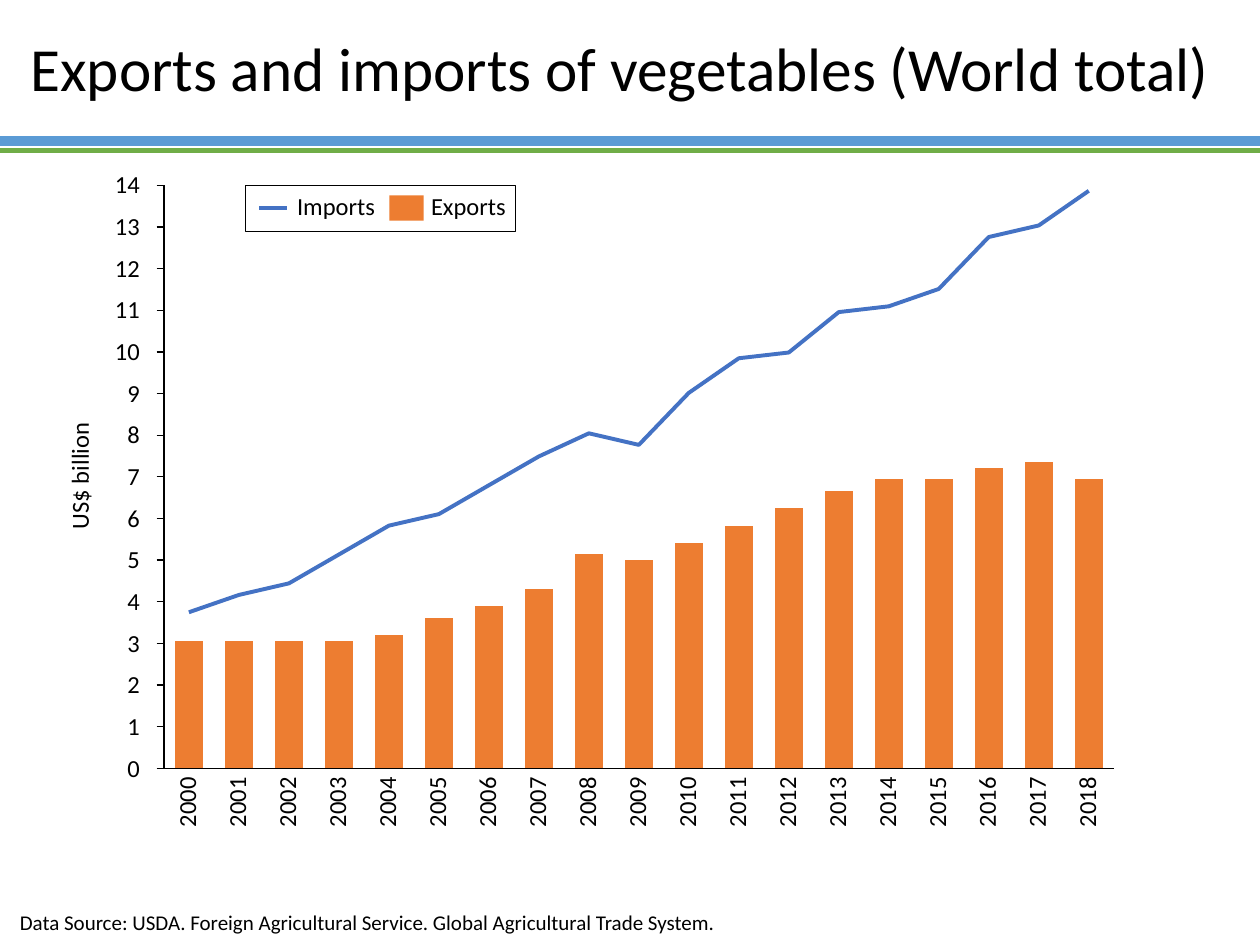
"""Build a slide with a combined chart of vegetable exports and imports."""
from dataclasses import dataclass

from lxml.etree import SubElement
from pptx import Presentation
from pptx.chart.data import CategoryChartData
from pptx.dml.color import RGBColor
from pptx.enum.chart import XL_CHART_TYPE, XL_MARKER_STYLE, XL_TICK_LABEL_POSITION, XL_TICK_MARK
from pptx.enum.shapes import MSO_CONNECTOR, MSO_SHAPE
from pptx.enum.text import MSO_ANCHOR, MSO_AUTO_SIZE, PP_ALIGN
from pptx.oxml import parse_xml
from pptx.oxml.ns import nsdecls, qn
from pptx.util import Cm, Pt


@dataclass(frozen=True)
class Theme:
    font: str = "Calibri"
    black: RGBColor = RGBColor(0x00, 0x00, 0x00)
    upper_rule: RGBColor = RGBColor(0x5B, 0x9B, 0xD5)
    lower_rule: RGBColor = RGBColor(0x70, 0xAD, 0x47)
    exports: RGBColor = RGBColor(0xED, 0x7D, 0x31)
    imports: RGBColor = RGBColor(0x44, 0x72, 0xC4)
    title_size: Pt = Pt(35)
    label_size: Pt = Pt(14)
    source_size: Pt = Pt(12)
    chart_size: Pt = Pt(10)


theme = Theme()


def add_label(text, left, top, width, height, alignment, vertical=False, anchor=MSO_ANCHOR.MIDDLE):
    text_box = slide.shapes.add_textbox(Cm(left), Cm(top), Cm(width), Cm(height))
    frame = text_box.text_frame
    frame.margin_left = frame.margin_right = frame.margin_top = frame.margin_bottom = 0
    frame.word_wrap = False
    frame.vertical_anchor = anchor
    if vertical:
        frame._txBody.bodyPr.set("vert", "vert270")
    paragraph = frame.paragraphs[0]
    paragraph.alignment = alignment
    paragraph.line_spacing = 0.9
    run = paragraph.add_run()
    run.text = text
    run.font.name = theme.font
    run.font.size = theme.label_size
    run.font.color.rgb = theme.black


def add_line(left, right, top, color, width):
    connector = slide.shapes.add_connector(
        MSO_CONNECTOR.STRAIGHT, Cm(left), Cm(top), Cm(right), Cm(top))
    connector.line.color.rgb = color
    connector.line.width = Pt(width)
    SubElement(connector._element.spPr, qn("a:effectLst"))


presentation = Presentation()
presentation.slide_width = Cm(25.4)
presentation.slide_height = Cm(19.05)
slide = presentation.slides.add_slide(presentation.slide_layouts[5])

add_line(-0.03, 25.45, 2.84, theme.upper_rule, 6)
add_line(-0.03, 25.45, 3.03, theme.lower_rule, 3)

title = slide.shapes.title
title.left, title.top, title.width, title.height = Cm(0.36), Cm(0.27), Cm(24.79), Cm(2.34)
title.text_frame.vertical_anchor = MSO_ANCHOR.MIDDLE
title.text_frame.auto_size = MSO_AUTO_SIZE.NONE
paragraph = title.text_frame.paragraphs[0]
paragraph.alignment = PP_ALIGN.LEFT
paragraph.line_spacing = 0.9
run = paragraph.add_run()
run.text = "Exports and imports of vegetables (World total)"
run.font.name = theme.font
run.font.size = theme.title_size
run.font.color.rgb = theme.black

chart_data = CategoryChartData()
chart_data.categories = [str(number) for number in range(1, 20)]
chart_data.add_series(
    "Series 1", [22, 22, 22, 22, 23, 26, 28, 31, 37, 36, 39, 42, 45, 48, 50, 50, 52, 53, 50])
chart_data.add_series(
    "Series 2", [27, 30, 32, 37, 42, 44, 49, 54, 58, 56, 65, 71, 72, 79, 80, 83, 92, 94, 100])
chart = slide.shapes.add_chart(
    XL_CHART_TYPE.COLUMN_STACKED, Cm(3.07), Cm(3.5), Cm(19.6), Cm(12.22), chart_data).chart
chart.has_legend = False
chart.has_title = False
chart.font.name = theme.font
chart.font.size = theme.chart_size
chart.font.color.rgb = theme.black

columns = chart.plots[0]
columns.gap_width = 80
columns.overlap = 100
columns.vary_by_categories = False
column_chart = columns._element
line_chart = parse_xml(
    f'<c:lineChart {nsdecls("c")}><c:grouping val="standard"/><c:varyColors val="0"/></c:lineChart>')
imports_element = columns.series[1]._element
for invert in imports_element.findall(qn("c:invertIfNegative")):
    imports_element.remove(invert)
line_chart.append(imports_element)
SubElement(line_chart, qn("c:marker")).set("val", "1")
for axis_id in column_chart.findall(qn("c:axId")):
    SubElement(line_chart, qn("c:axId")).set("val", axis_id.get("val"))
column_chart.addnext(line_chart)

exports_series = chart.plots[0].series[0]
exports_series.format.fill.solid()
exports_series.format.fill.fore_color.rgb = theme.exports
imports_series = chart.plots[1].series[0]
imports_series.format.line.color.rgb = theme.imports
imports_series.format.line.width = Pt(2.25)
imports_series.marker.style = XL_MARKER_STYLE.NONE
imports_series.smooth = False

plot_area = column_chart.getparent()
for layout in plot_area.findall(qn("c:layout")):
    plot_area.remove(layout)
plot_area.insert(0, parse_xml(
    f'<c:layout {nsdecls("c")}><c:manualLayout><c:layoutTarget val="inner"/>'
    '<c:xMode val="edge"/><c:yMode val="edge"/><c:x val="0.012"/><c:y val="0.019"/>'
    '<c:w val="0.977"/><c:h val="0.962"/></c:manualLayout></c:layout>'))

for axis, tick_mark in (
        (chart.category_axis, XL_TICK_MARK.NONE), (chart.value_axis, XL_TICK_MARK.OUTSIDE)):
    axis.has_major_gridlines = False
    axis.major_tick_mark = tick_mark
    axis.minor_tick_mark = XL_TICK_MARK.NONE
    axis.tick_label_position = XL_TICK_LABEL_POSITION.NONE
    axis.format.line.color.rgb = theme.black
    axis.format.line.width = Pt(0.75)
chart.value_axis.minimum_scale = 0
chart.value_axis.maximum_scale = 101
chart.value_axis.major_unit = 7.21

for value in range(15):
    label_width = 0.26 * len(str(value))
    add_label(str(value), 2.82 - label_width, 15.24 - 0.84 * value, label_width, 0.53, PP_ALIGN.RIGHT)
for position in range(19):
    add_label(str(2000 + position), 3.53 + 18.14 * position / 18, 15.67, 0.53, 1.02,
              PP_ALIGN.RIGHT, vertical=True)
add_label("US$ billion", 1.37, 8.53, 0.53, 2.13, PP_ALIGN.CENTER,
          vertical=True, anchor=MSO_ANCHOR.BOTTOM)

legend_frame = slide.shapes.add_shape(MSO_SHAPE.RECTANGLE, Cm(4.95), Cm(3.73), Cm(5.44), Cm(0.94))
legend_frame.shadow.inherit = False
legend_frame.fill.background()
legend_frame.line.color.rgb = theme.black
legend_frame.line.width = Pt(0.25)
exports_key = slide.shapes.add_shape(MSO_SHAPE.RECTANGLE, Cm(7.85), Cm(3.94), Cm(0.69), Cm(0.51))
exports_key.shadow.inherit = False
exports_key.fill.solid()
exports_key.fill.fore_color.rgb = theme.exports
exports_key.line.fill.background()
add_line(5.23, 5.79, 4.19, theme.imports, 2.25)
for name, label_left in (("Imports", 5.99), ("Exports", 8.69)):
    add_label(name, label_left, 3.92, 1.68, 0.53, PP_ALIGN.LEFT)

source_box = slide.shapes.add_textbox(Cm(0.15), Cm(18.21), Cm(24.79), Cm(0.76))
source_box.text_frame.word_wrap = True
source_box.text_frame.auto_size = MSO_AUTO_SIZE.SHAPE_TO_FIT_TEXT
run = source_box.text_frame.paragraphs[0].add_run()
run.text = "Data Source: USDA. Foreign Agricultural Service. Global Agricultural Trade System."
run.font.name = theme.font
run.font.size = theme.source_size
run.font.color.rgb = theme.black

presentation.save("out.pptx")
